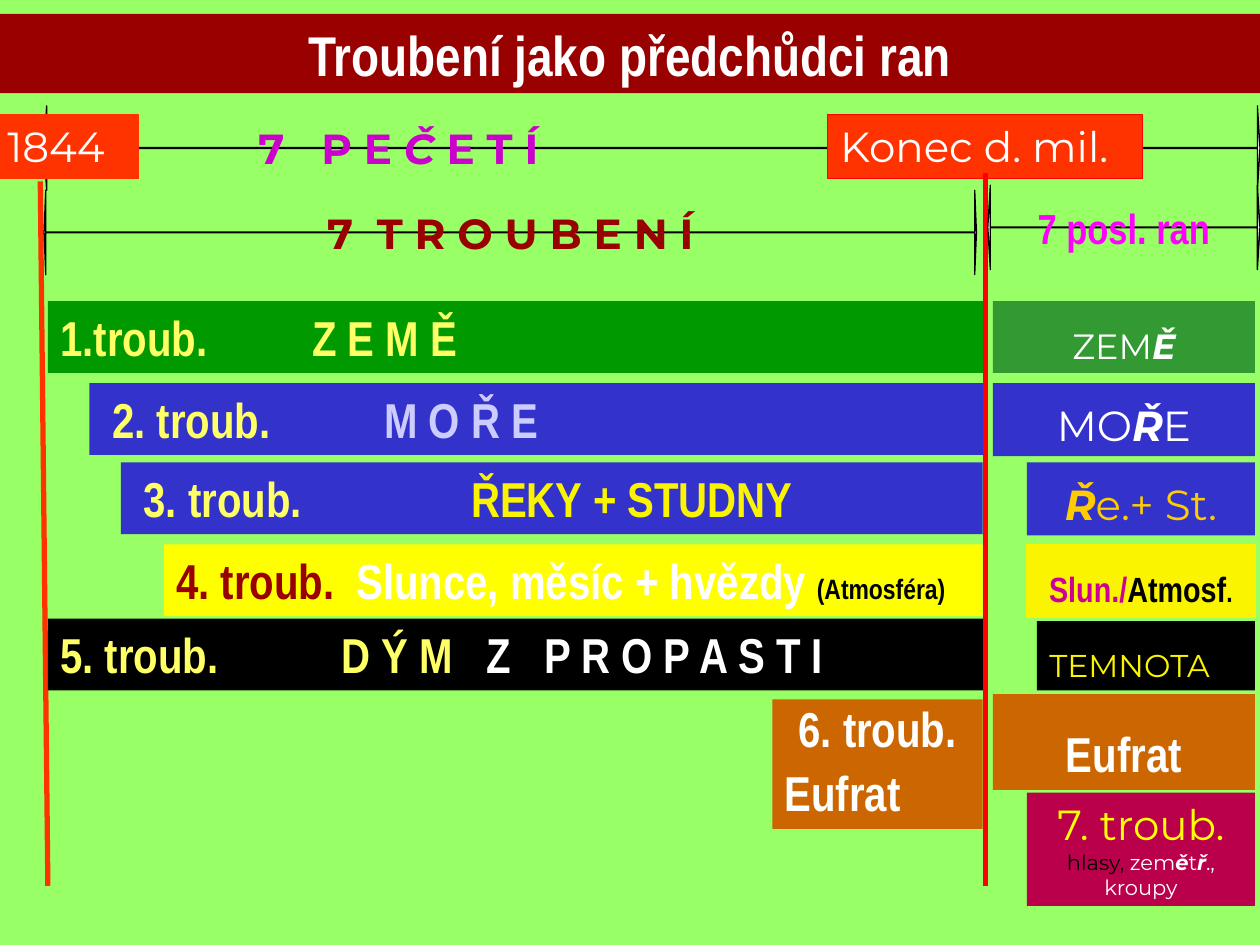
import dataclasses
import pptx
import pptx.util
import pptx.dml.color
import pptx.enum.shapes
import pptx.enum.text
import pptx.oxml

PX = 9144
ALIGN = pptx.enum.text.PP_ALIGN
ANCHOR = pptx.enum.text.MSO_ANCHOR
SHAPE = pptx.enum.shapes.MSO_SHAPE


@dataclasses.dataclass(frozen=True)
class Theme:
    narrow: str = "Arial Narrow"
    round: str = "Montserrat"
    title: int = 32
    row: int = 28
    label: int = 24
    plague: int = 20
    small: int = 18
    note: int = 16
    tiny: int = 12
    back: str = "99FF66"
    maroon: str = "990000"
    red: str = "FF0000"
    orange: str = "FF3300"
    white: str = "FFFFFF"
    black: str = "000000"
    blue: str = "3333CC"
    pale_blue: str = "CCCCFF"
    yellow: str = "FFFF00"
    light: str = "FFFF66"
    lemon: str = "FAF400"
    gold: str = "FFCC00"
    green: str = "009900"
    moss: str = "339933"
    brown: str = "CC6600"
    crimson: str = "BA004B"
    purple: str = "CC00CC"
    magenta: str = "FF00FF"
    plum: str = "CC0099"


T = Theme()


def px(*values):
    return [v * PX for v in values]


def rgb(value):
    return pptx.dml.color.RGBColor.from_string(value)


def narrow(text, color, size=T.row):
    return text, T.narrow, size, color, True, False


def rounded(text, color, size=T.label, bold=False, italic=False):
    return text, T.round, size, color, bold, italic


def write(p, runs, align=ALIGN.LEFT, spacing=None, tabs=()):
    p.alignment = align
    if spacing:
        p.line_spacing = spacing
    for text, font, size, color, bold, italic in runs:
        r = p.add_run()
        r.text = text
        r.font.name, r.font.size = font, pptx.util.Pt(size)
        r.font.bold, r.font.italic = bold, italic
        r.font.color.rgb = rgb(color)
    if tabs:
        tab_list = pptx.oxml.parse_xml(
            '<a:tabLst xmlns:a="http://schemas.openxmlformats.org/drawingml/2006/main">'
            + "".join(f'<a:tab pos="{t * PX}" algn="l"/>' for t in tabs)
            + "</a:tabLst>")
        p._p.get_or_add_pPr().append(tab_list)


def frame(sp, anchor=ANCHOR.TOP, left=10):
    tf = sp.text_frame
    tf.word_wrap = True
    tf.auto_size = pptx.enum.text.MSO_AUTO_SIZE.NONE
    tf.vertical_anchor = anchor
    tf.margin_left, tf.margin_top, tf.margin_right, tf.margin_bottom = px(left, 5, 10, 5)
    return tf


def add_shape(s, kind, box, fill, line=None, anchor=ANCHOR.TOP, left=10):
    sp = s.shapes.add_shape(kind, *px(*box))
    sp.shadow.inherit = False
    sp.fill.solid()
    sp.fill.fore_color.rgb = rgb(fill)
    if line:
        sp.line.color.rgb = rgb(line)
        sp.line.width = pptx.util.Pt(0.75)
    else:
        sp.line.fill.background()
    return sp, frame(sp, anchor, left)


def add_bar(s, box, fill, runs, line=None, left=10, **layout):
    sp, tf = add_shape(s, SHAPE.RECTANGLE, box, fill, line, left=left)
    write(tf.paragraphs[0], runs, **layout)
    return tf


def add_span(s, box, heads, runs, left=10, **layout):
    sp, tf = add_shape(s, SHAPE.LEFT_RIGHT_ARROW, box, T.white, T.black, ANCHOR.MIDDLE, left)
    sp.adjustments[0], sp.adjustments[1] = heads
    write(tf.paragraphs[0], runs, **layout)


def add_marker(s, box, text, line, start, end):
    add_bar(s, box, T.orange, [rounded(text, T.white)], line)
    x, y = box[:2]
    c = s.shapes.add_connector(
        pptx.enum.shapes.MSO_CONNECTOR.STRAIGHT,
        *px(x + start[0], y + start[1], x + end[0], y + end[1]))
    c.line.color.rgb = rgb(line)
    c.line.width = pptx.util.Pt(3)
    c._element.spPr.append(pptx.oxml.parse_xml(
        '<a:effectLst xmlns:a="http://schemas.openxmlformats.org/drawingml/2006/main"/>'))


def add_title(s, box):
    sp = s.shapes.title
    sp.left, sp.top, sp.width, sp.height = px(*box)
    sp.fill.solid()
    sp.fill.fore_color.rgb = rgb(T.maroon)
    tf = frame(sp)
    write(tf.paragraphs[0], [narrow("Troubení jako předchůdci ran", T.white, T.title)], ALIGN.CENTER)


def add_trumpets(s, box):
    x, y, w, h = box
    rows = [
        (0, 0, T.green, 10, [200],
         [narrow("1.troub.\tZ E M Ě", T.light)]),
        (33, 65, T.blue, 18, [216],
         [narrow("2. troub.\t", T.light), narrow("M O Ř E", T.pale_blue)]),
        (58, 128, T.blue, 18, [260],
         [narrow("3. troub.\t", T.light), narrow("ŘEKY + STUDNY", T.lemon)]),
        (92, 193, T.yellow, 10, [143],
         [narrow("4. troub.\t", T.maroon), narrow("Slunce, měsíc + hvězdy ", T.white),
          narrow("(Atmosféra)", T.black, T.note)]),
        (0, 252, T.black, 10, [223, 338, 384],
         [narrow("5. troub.\tD Ý M", T.light), narrow("\tZ\tP R O P A S T I", T.white)]),
    ]
    for dx, dy, fill, left, tabs, runs in rows:
        add_bar(s, (x + dx, y + dy, w - dx, 57), fill, runs, left=left, tabs=tabs)
    tf = add_bar(s, (x + 575, y + 316, w - 575, h - 316), T.brown,
                 [narrow("6. troub.", T.white)], align=ALIGN.CENTER, spacing=0.9)
    p = tf.add_paragraph()
    p.space_before = pptx.util.Pt(14)
    write(p, [narrow("Eufrat", T.white)], spacing=0.6)


def add_plagues(s, box):
    x, y, w, h = box
    mid = ALIGN.CENTER
    rows = [
        (0, 0, 57, T.moss, None, mid, 1.4,
         [rounded("ZEM", T.white, T.plague), rounded("Ě", T.white, T.plague, True, True)]),
        (0, 65, 58, T.blue, None, mid, 1.2,
         [rounded("MO", T.white), rounded("Ř", T.white, bold=True, italic=True),
          rounded("E", T.white)]),
        (27, 128, 58, T.blue, None, mid, 1.2,
         [rounded("Ř", T.gold, bold=True, italic=True), rounded("e.+ St.", T.gold)]),
        (27, 193, 58, T.lemon, T.lemon, mid, 1.4,
         [narrow("Slun./", T.plum, T.plague), narrow("Atmosf", T.black, T.plague),
          narrow(".", T.black, T.note)]),
        (35, 254, 55, T.black, None, ALIGN.LEFT, 1.5,
         [rounded("TEMNOTA", T.lemon, T.small)]),
        (0, 312, 76, T.brown, None, mid, 1.4, [narrow("Eufrat", T.white)]),
        (27, 390, h - 390, T.crimson, None, mid, None, [rounded("7. troub.", T.yellow)]),
    ]
    for dx, dy, height, fill, line, align, spacing, runs in rows:
        tf = add_bar(s, (x + dx, y + dy, w - dx, height), fill, runs, line,
                     align=align, spacing=spacing)
    signs = [("hlasy,", T.black, False), (" zem", T.white, False), ("ě", T.white, True),
             ("t", T.white, False), ("ř", T.white, True), ("., kroupy", T.white, False)]
    write(tf.add_paragraph(),
          [rounded(text, color, T.tiny, strong, strong) for text, color, strong in signs], mid)


def main():
    prs = pptx.Presentation()
    prs.slide_width, prs.slide_height = px(1000, 750)
    s = prs.slides.add_slide(prs.slide_layouts[5])
    s.background.fill.solid()
    s.background.fill.fore_color.rgb = rgb(T.back)
    add_title(s, (0, 11, 1000, 63))
    add_span(s, (35, 84, 965, 67), (0.01, 0.03),
             [rounded("7\tP E ", T.purple, bold=True),
              rounded("Č", T.purple, bold=True, italic=True),
              rounded(" E T Í", T.purple, bold=True)], left=170, tabs=[50])
    add_marker(s, (-4, 91, 114, 51), "1844", T.orange, (36, 53), (42, 612))
    add_trumpets(s, (38, 239, 742, 419))
    add_plagues(s, (788, 239, 208, 480))
    add_marker(s, (657, 91, 250, 51), "Konec d. mil.", T.red, (125, 46), (125, 612))
    add_span(s, (35, 151, 740, 67), (0.01, 0.02),
             [rounded("7  T R O U B E N Í", T.maroon, bold=True)], align=ALIGN.CENTER)
    add_span(s, (784, 147, 216, 67), (0.01, 0.03),
             [narrow("7 posl. ran", T.magenta, T.label)], align=ALIGN.CENTER)
    prs.save("out.pptx")


if __name__ == "__main__":
    main()
